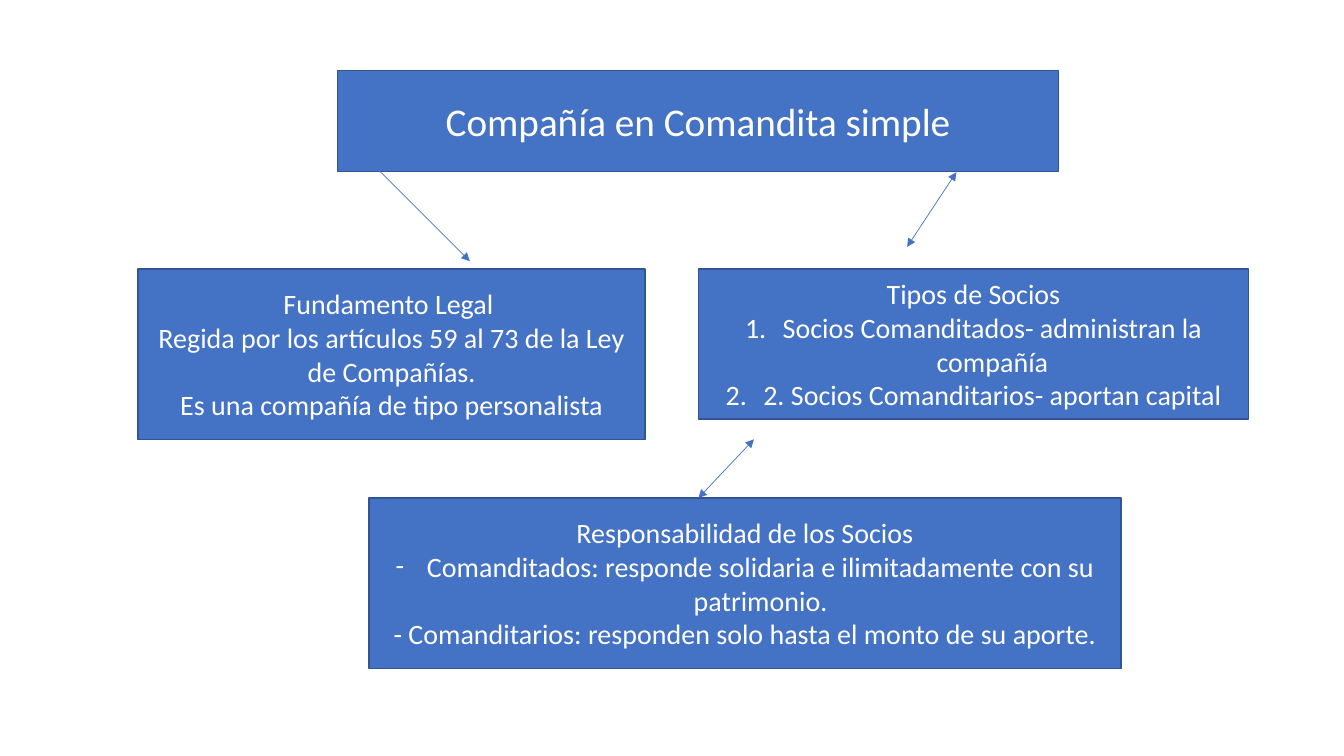
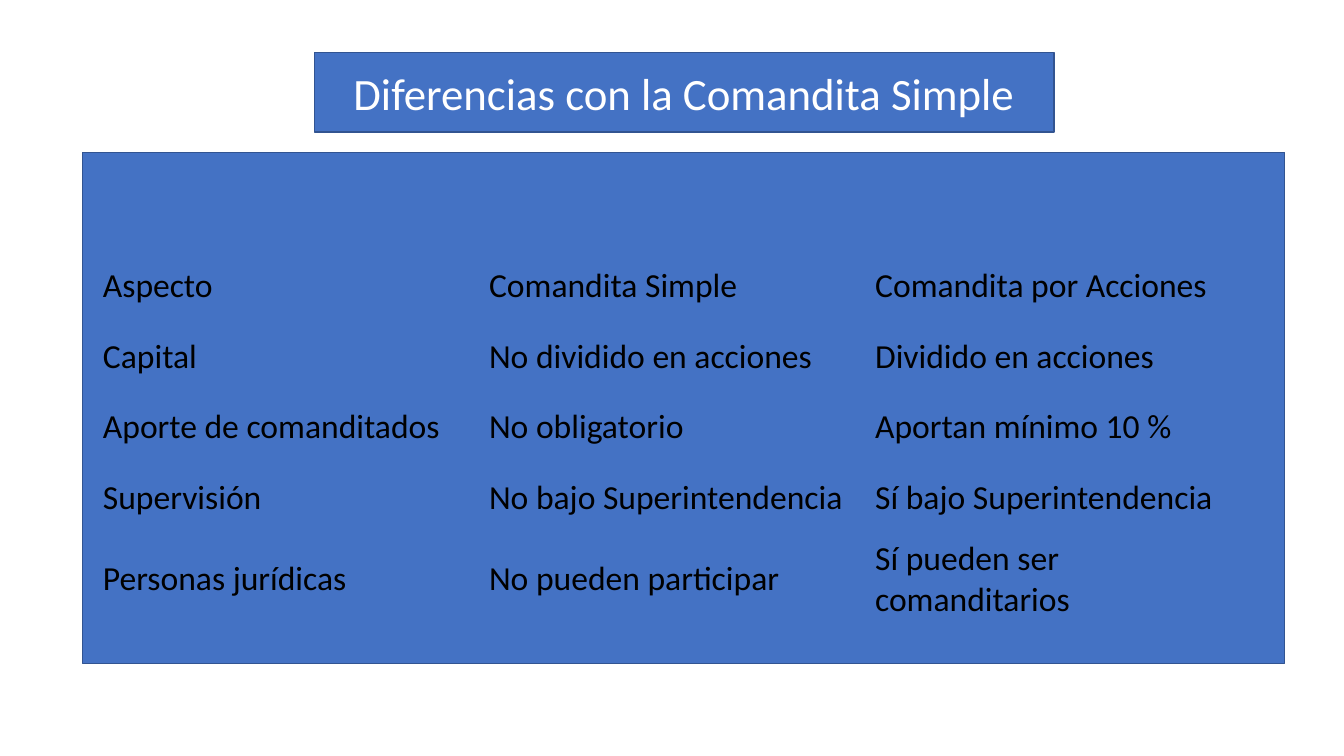
from dataclasses import dataclass

from lxml import etree
from pptx import Presentation
from pptx.dml.color import RGBColor
from pptx.enum.shapes import MSO_CONNECTOR, MSO_SHAPE
from pptx.enum.text import MSO_ANCHOR, MSO_AUTO_SIZE, PP_ALIGN
from pptx.oxml.ns import qn
from pptx.util import Cm, Pt

RECTANGLE = MSO_SHAPE.RECTANGLE
STRAIGHT = MSO_CONNECTOR.STRAIGHT
MIDDLE = MSO_ANCHOR.MIDDLE
NO_AUTOFIT = MSO_AUTO_SIZE.NONE
CENTER = PP_ALIGN.CENTER
LEFT = PP_ALIGN.LEFT
TITLE_ONLY = 5
PLAIN_TABLE_STYLE = "{2D5ABB26-0587-4C30-8999-92F81FD0307C}"


@dataclass(frozen=True)
class Theme:
    font: str = "Calibri"
    box_fill: RGBColor = RGBColor(0x44, 0x72, 0xC4)
    box_line: RGBColor = RGBColor(0x32, 0x54, 0x91)
    box_text: RGBColor = RGBColor(0xFF, 0xFF, 0xFF)
    table_text: RGBColor = RGBColor(0, 0, 0)
    box_size: int = 20
    table_size: int = 24
    box_line_width: float = 1
    arrow_width: float = 0.5


THEME = Theme()

SLIDE_SIZE = (33.87, 19.05)

BULLETS = {
    "number": (0.95, "a:buAutoNum", {"type": "arabicPeriod"}),
    "dash": (0.79, "a:buChar", {"char": "-"}),
}

COMPANY_TITLE = ("Compañía en Comandita simple", (8.51, 1.78, 18.16, 2.54), 28)
COMPANY_BOXES = [
    ((3.48, 6.78, 12.78, 4.29), [
        ("Fundamento Legal ", None),
        ("Regida por los artículos 59 al 73 de la Ley de Compañías.", None),
        ("Es una compañía de tipo personalista", None),
    ]),
    ((17.6, 6.78, 13.87, 3.78), [
        ("Tipos de Socios", None),
        ("Socios Comanditados- administran la compañía", "number"),
        ("2. Socios Comanditarios- aportan capital", "number"),
    ]),
    ((9.3, 12.55, 18.95, 4.29), [
        ("Responsabilidad de los Socios", None),
        ("Comanditados: responde solidaria e ilimitadamente con su patrimonio.", "dash"),
        ("- Comanditarios: responden solo hasta el monto de su aporte.", None),
    ]),
]
COMPANY_ARROWS = [
    ((9.3, 4.04), (11.84, 6.58), ("a:tailEnd",)),
    ((19, 11.07), (17.6, 12.55), ("a:headEnd", "a:tailEnd")),
    ((24.1, 4.34), (22.86, 6.22), ("a:headEnd", "a:tailEnd")),
]

DIFFERENCES_TITLE = ("Diferencias con la Comandita Simple", (7.92, 1.32, 18.64, 2.01), 32)
DIFFERENCES_PANEL = (2.08, 3.84, 30.3, 12.88)
DIFFERENCES_ROWS = [
    ("Aspecto", "Comandita Simple", "Comandita por Acciones"),
    ("Capital", "No dividido en acciones", "Dividido en acciones"),
    ("Aporte de comanditados", "No obligatorio", "Aportan mínimo 10 %"),
    ("Supervisión", "No bajo Superintendencia", "Sí bajo Superintendencia"),
    ("Personas jurídicas", "No pueden participar", "Sí pueden ser comanditarios"),
]
TABLE_CORNER = (2.34, 6.32)
COLUMN_WIDTH = 9.73
ROW_HEIGHTS = [1.78] * 4 + [2.29]


def apply_format(target, values):
    for name, value in values.items():
        setattr(target, name, value)


def add_bullet(paragraph, kind):
    indent, tag, attributes = BULLETS[kind]
    properties = paragraph._p.get_or_add_pPr()
    properties.set("marL", str(Cm(indent)))
    properties.set("indent", str(-Cm(indent)))
    etree.SubElement(properties, qn("a:buFont"), typeface=THEME.font)
    etree.SubElement(properties, qn(tag), attributes)


def write_text(frame, lines, size, color, alignment):
    for index, (text, bullet) in enumerate(lines):
        paragraph = frame.add_paragraph() if index else frame.paragraphs[0]
        paragraph.alignment = alignment
        if bullet:
            add_bullet(paragraph, bullet)
        run = paragraph.add_run()
        run.text = text
        apply_format(run.font, {"name": THEME.font, "size": Pt(size)})
        run.font.color.rgb = color


def style_box(shape, lines=(), size=THEME.box_size):
    shape.shadow.inherit = False
    shape.fill.solid()
    shape.fill.fore_color.rgb = THEME.box_fill
    shape.line.color.rgb = THEME.box_line
    shape.line.width = Pt(THEME.box_line_width)
    apply_format(shape.text_frame, {
        "word_wrap": True, "auto_size": NO_AUTOFIT, "vertical_anchor": MIDDLE,
    })
    write_text(shape.text_frame, lines, size, THEME.box_text, CENTER)


def add_box(slide, place, lines=()):
    style_box(slide.shapes.add_shape(RECTANGLE, *map(Cm, place)), lines)


def add_titled_slide(presentation, text, place, size):
    slide = presentation.slides.add_slide(presentation.slide_layouts[TITLE_ONLY])
    title = slide.shapes.title
    apply_format(title, dict(zip(("left", "top", "width", "height"), map(Cm, place))))
    style_box(title, [(text, None)], size)
    return slide


def add_arrow(slide, start, end, heads):
    connector = slide.shapes.add_connector(STRAIGHT, *map(Cm, start + end))
    connector.line.color.rgb = THEME.box_fill
    connector.line.width = Pt(THEME.arrow_width)
    properties = connector._element.spPr
    line = properties.find(qn("a:ln"))
    for head in heads:
        etree.SubElement(line, qn(head), type="triangle")
    etree.SubElement(properties, qn("a:effectLst"))


def add_differences_table(slide):
    column_count = len(DIFFERENCES_ROWS[0])
    size = (COLUMN_WIDTH * column_count, sum(ROW_HEIGHTS))
    frame = slide.shapes.add_table(
        len(DIFFERENCES_ROWS), column_count, *map(Cm, TABLE_CORNER + size))
    table = frame.table
    apply_format(table, {"first_row": False, "horz_banding": False})
    next(frame._element.iter(qn("a:tableStyleId"))).text = PLAIN_TABLE_STYLE
    for column in table.columns:
        column.width = Cm(COLUMN_WIDTH)
    for row, height, texts in zip(table.rows, ROW_HEIGHTS, DIFFERENCES_ROWS):
        row.height = Cm(height)
        for cell, text in zip(row.cells, texts):
            cell.fill.background()
            cell.vertical_anchor = MIDDLE
            write_text(cell.text_frame, [(text, None)], THEME.table_size,
                       THEME.table_text, LEFT)


def build_company_slide(presentation):
    slide = add_titled_slide(presentation, *COMPANY_TITLE)
    for place, lines in COMPANY_BOXES:
        add_box(slide, place, lines)
    for arrow in COMPANY_ARROWS:
        add_arrow(slide, *arrow)


def build_differences_slide(presentation):
    slide = add_titled_slide(presentation, *DIFFERENCES_TITLE)
    add_box(slide, DIFFERENCES_PANEL)
    add_differences_table(slide)


def main():
    presentation = Presentation()
    presentation.slide_width, presentation.slide_height = map(Cm, SLIDE_SIZE)
    build_company_slide(presentation)
    build_differences_slide(presentation)
    presentation.save("out.pptx")


if __name__ == "__main__":
    main()
